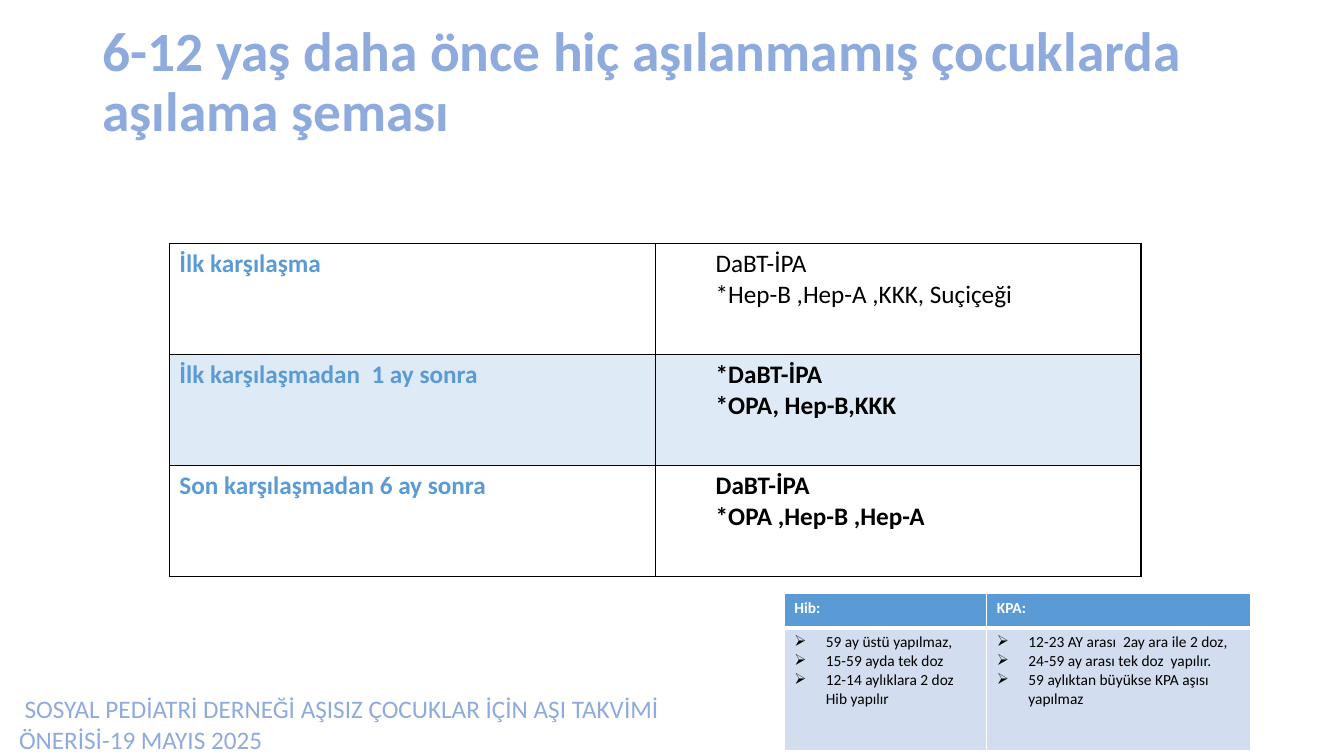
from pptx import Presentation, util as u
from pptx.dml.color import RGBColor
from pptx.enum import text
from lxml import etree

# Content
TITLE = "6-12 yaş daha önce hiç aşılanmamış çocuklarda aşılama şeması"
SOURCE = " SOSYAL PEDİATRİ DERNEĞİ AŞISIZ ÇOCUKLAR İÇİN AŞI TAKVİMİ ÖNERİSİ-19 MAYIS 2025"
VISITS = [  # visit, vaccines, bold vaccines, fill
    ("İlk karşılaşma", ["DaBT-İPA", "*Hep-B ,Hep-A ,KKK, Suçiçeği"], False, None),
    ("İlk karşılaşmadan  1 ay sonra", ["*DaBT-İPA", "*OPA, Hep-B,KKK"], True, "DEEBF7"),
    ("Son karşılaşmadan 6 ay sonra", ["DaBT-İPA", "*OPA ,Hep-B ,Hep-A"], True, None),
]
NOTES = [
    ("Hib:", ["59 ay üstü yapılmaz,", "15-59 ayda tek doz",
              "12-14 aylıklara 2 doz Hib yapılır"]),
    ("KPA:", ["12-23 AY arası  2ay ara ile 2 doz,", "24-59 ay arası tek doz  yapılır.",
              "59 aylıktan büyükse KPA aşısı yapılmaz"]),
]
FONT = "Calibri"
BLACK, WHITE, BLUE, PALE, LILAC = "000000", "FFFFFF", "5B9BD5", "D2DEEF", "8FAADC"
NS = "http://schemas.openxmlformats.org/drawingml/2006/main"


def rgb(code):
    return RGBColor.from_string(code)


def write(frame, lines, size, color, bold=False, indent=0, hang=0, mark=None):
    for i, line in enumerate(lines):
        para = frame.paragraphs[0] if i == 0 else frame.add_paragraph()
        para.alignment = text.PP_ALIGN.LEFT
        props = para._p.get_or_add_pPr()
        if indent:
            props.set("marL", str(u.Pt(indent)))
            props.set("indent", str(u.Pt(-hang)))
        if mark:
            etree.SubElement(props, f"{{{NS}}}buChar", char=mark)
        run = para.add_run()
        run.text = line
        run.font.name, run.font.size, run.font.bold = FONT, u.Pt(size), bold
        run.font.color.rgb = rgb(color)


def paint(cell, fill, color, widths):
    """Set borders (left, right, top, bottom), then the fill."""
    props = cell._tc.get_or_add_tcPr()
    for side, width in zip("LRTB", widths):
        line = etree.SubElement(props, f"{{{NS}}}ln{side}", w=str(u.Pt(width)))
        solid = etree.SubElement(line, f"{{{NS}}}solidFill")
        etree.SubElement(solid, f"{{{NS}}}srgbClr", val=color)
    if fill:
        cell.fill.solid()
        cell.fill.fore_color.rgb = rgb(fill)
    else:
        cell.fill.background()


def grid(slide, left, top, cols, rows):
    frame = slide.shapes.add_table(len(rows), len(cols), u.Pt(left), u.Pt(top),
                                   u.Pt(sum(cols)), u.Pt(sum(rows)))
    table = frame.table
    table.first_row = table.horz_banding = False
    for col, width in zip(table.columns, cols):
        col.width = u.Pt(width)
    for row, height in zip(table.rows, rows):
        row.height = u.Pt(height)
    return table


def main():
    deck = Presentation()
    deck.slide_width, deck.slide_height = u.Pt(960), u.Pt(540)
    slide = deck.slides.add_slide(deck.slide_layouts[5])

    # Title
    title = slide.shapes.title
    title.left, title.top, title.width, title.height = map(u.Pt, (66, 7.5, 828, 104.4))
    frame = title.text_frame
    frame.word_wrap = True
    frame.auto_size = text.MSO_AUTO_SIZE.NONE
    frame.vertical_anchor = text.MSO_ANCHOR.MIDDLE
    write(frame, [TITLE], 39.6, LILAC, True)
    frame.paragraphs[0].line_spacing = 0.9

    # Dose notes by vaccine
    notes = grid(slide, 560.2, 424.1, [144.7, 188.6], [24.5, 87.5])
    for c, (name, doses) in enumerate(NOTES):
        head, body = notes.cell(0, c), notes.cell(1, c)
        paint(head, BLUE, WHITE, (1, 1, 1, 3))
        write(head.text_frame, [name], 11, WHITE, True)
        paint(body, PALE, WHITE, (1, 1, 3, 1))
        write(body.text_frame, doses, 11, BLACK, indent=22.5, hang=22.5, mark="➢")

    # Visit schedule
    plan = grid(slide, 121, 174.2, [347] * 2, [79.2] * len(VISITS))
    for r, (visit, doses, bold, fill) in enumerate(VISITS):
        left, right = plan.cell(r, 0), plan.cell(r, 1)
        for cell in (left, right):
            paint(cell, fill, BLACK, (1, 1, 1, 1))
        write(left.text_frame, [visit], 18, BLUE, True)
        write(right.text_frame, doses, 18, BLACK, bold, indent=36)

    # Source line
    box = slide.shapes.add_textbox(u.Pt(6.5), u.Pt(492), u.Pt(553.7), u.Pt(48))
    box.text_frame.word_wrap = True
    box.text_frame.margin_bottom = 0
    write(box.text_frame, [SOURCE], 18, LILAC)

    deck.save("out.pptx")


if __name__ == "__main__":
    main()
